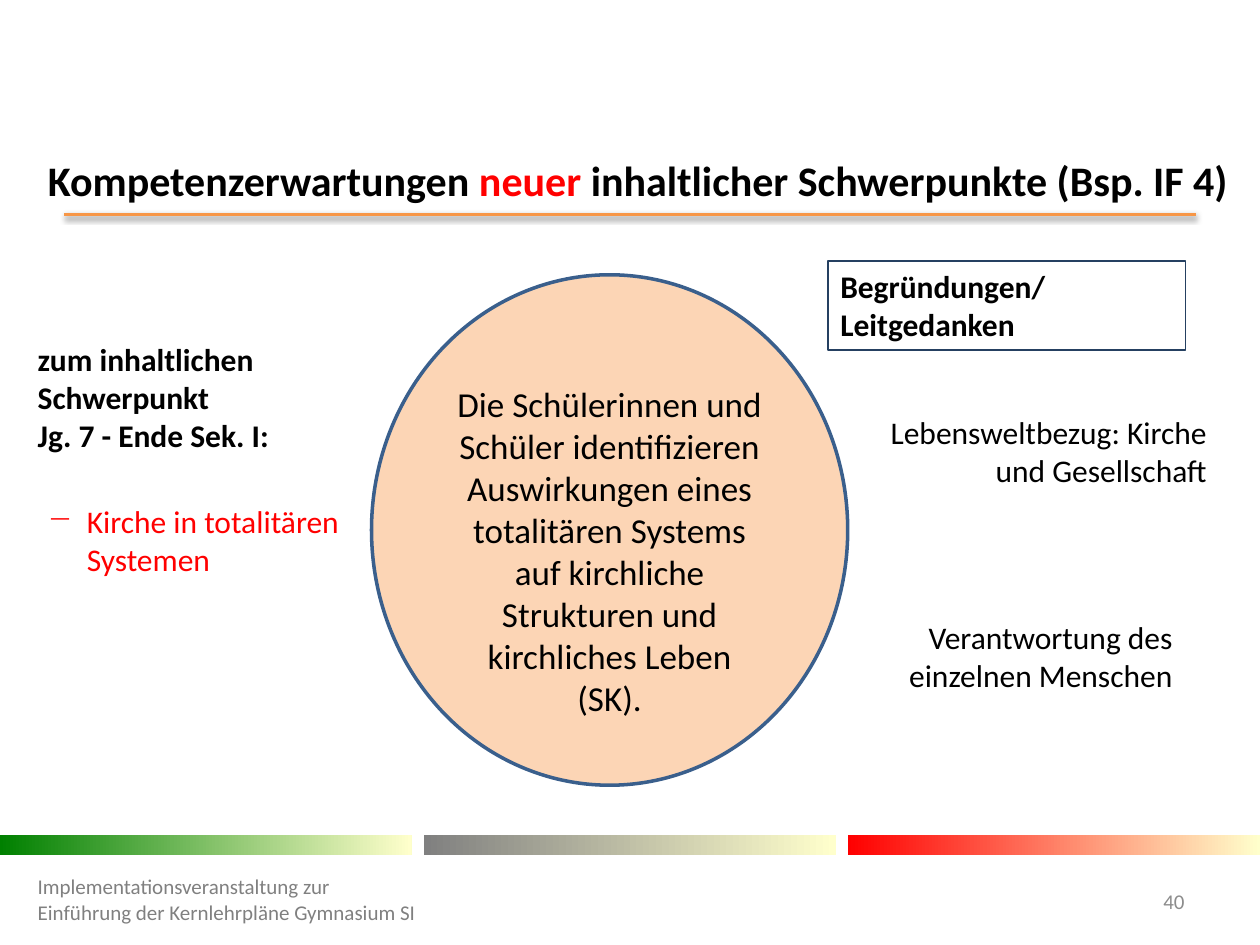
from dataclasses import dataclass

from lxml import etree
from pptx import Presentation
from pptx.dml.color import RGBColor
from pptx.enum.shapes import MSO_CONNECTOR, MSO_SHAPE
from pptx.enum.text import MSO_ANCHOR, MSO_AUTO_SIZE, PP_ALIGN
from pptx.oxml.ns import qn
from pptx.util import Cm, Pt

LEFT, CENTER, RIGHT = PP_ALIGN.LEFT, PP_ALIGN.CENTER, PP_ALIGN.RIGHT
TOP, MIDDLE = MSO_ANCHOR.TOP, MSO_ANCHOR.MIDDLE
RECTANGLE, OVAL = MSO_SHAPE.RECTANGLE, MSO_SHAPE.OVAL
STRAIGHT = MSO_CONNECTOR.STRAIGHT
TITLE_ONLY = 5


@dataclass(frozen=True)
class Theme:
    font: str = "Calibri"
    title_size: int = 24
    circle_size: int = 20
    body_size: int = 18
    footer_size: int = 12
    text: str = "000000"
    accent: str = "FF0000"
    footer: str = "808080"
    number: str = "8C8C8C"
    rule: str = "F79646"
    circle_fill: str = "FCD5B5"
    circle_line: str = "3A5F8C"
    frame_line: str = "254061"
    bar_starts: tuple = ("008000", "808080", "FF0000")
    bar_end: str = "FFFFCC"


THEME = Theme()


def rgb(value):
    return RGBColor.from_string(value)


def box(left, top, width, height):
    return Cm(left), Cm(top), Cm(width), Cm(height)


def write_text(shape, paragraphs, size=THEME.body_size, color=THEME.text, bold=False,
               align=LEFT, anchor=TOP, bullet=None, grow=False):
    """Fill a shape; a paragraph is a string or a list of (text, color) runs."""
    frame = shape.text_frame
    frame.word_wrap = True
    frame.vertical_anchor = anchor
    frame.auto_size = MSO_AUTO_SIZE.SHAPE_TO_FIT_TEXT if grow else MSO_AUTO_SIZE.NONE
    for index, content in enumerate(paragraphs):
        paragraph = frame.add_paragraph() if index else frame.paragraphs[0]
        paragraph.alignment = align
        if bullet:
            add_bullet(paragraph, bullet)
        runs = [(content, color)] if isinstance(content, str) else content
        for text, run_color in runs:
            run = paragraph.add_run()
            run.text = text
            run.font.name = THEME.font
            run.font.size = Pt(size)
            run.font.bold = bold
            run.font.color.rgb = rgb(run_color)


def add_bullet(paragraph, character, indent=Cm(0.79)):
    properties = paragraph._p.get_or_add_pPr()
    properties.set("marL", str(indent))
    properties.set("indent", str(-indent))
    etree.SubElement(properties, qn("a:buChar"), char=character)


def add_text(slide, position, paragraphs, **text_format):
    text_box = slide.shapes.add_textbox(*position)
    write_text(text_box, paragraphs, **text_format)


def add_outlined_shape(slide, kind, position, line, line_width, fill=None):
    shape = slide.shapes.add_shape(kind, *position)
    shape.shadow.inherit = False
    if fill:
        shape.fill.solid()
        shape.fill.fore_color.rgb = rgb(fill)
    else:
        shape.fill.background()
    shape.line.color.rgb = rgb(line)
    shape.line.width = Pt(line_width)
    return shape


def add_title(slide):
    title = slide.shapes.title
    title.left, title.top, title.width, title.height = box(0.71, 3.12, 24.41, 0.99)
    heading = [("Kompetenzerwartungen ", THEME.text), ("neuer", THEME.accent),
               (" inhaltlicher Schwerpunkte (Bsp. IF 4)", THEME.text)]
    write_text(title, [heading], size=THEME.title_size, bold=True, anchor=MIDDLE)


def add_title_rule(slide):
    """Draw the line under the title with its soft shadow."""
    rule = slide.shapes.add_connector(STRAIGHT, Cm(1.3), Cm(4.32), Cm(24.1), Cm(4.32))
    rule.line.color.rgb = rgb(THEME.rule)
    rule.line.width = Pt(2)
    effects = etree.SubElement(rule._element.spPr, qn("a:effectLst"))
    shadow = etree.SubElement(effects, qn("a:outerShdw"), blurRad=str(Pt(3.1)),
                              dist=str(Pt(1.6)), dir="5400000", rotWithShape="0")
    color = etree.SubElement(shadow, qn("a:srgbClr"), val="000000")
    etree.SubElement(color, qn("a:alpha"), val="38000")


def add_gradient_bars(slide, slide_width=25.4, bar_width=8.3):
    count = len(THEME.bar_starts)
    pitch = (slide_width - bar_width) / (count - 1)
    for index, start in enumerate(THEME.bar_starts):
        bar = slide.shapes.add_shape(RECTANGLE, *box(index * pitch, 16.84, bar_width, 0.4))
        bar.shadow.inherit = False
        bar.line.fill.background()
        bar.fill.gradient()
        bar.fill.gradient_angle = 0
        for stop, color, position in zip(bar.fill.gradient_stops, (start, THEME.bar_end), (0, 1)):
            stop.color.rgb = rgb(color)
            stop.position = position


def add_circle(slide):
    circle = add_outlined_shape(slide, OVAL, box(7.49, 5.54, 9.6, 10.29),
                                THEME.circle_line, 2, THEME.circle_fill)
    write_text(circle, ["Die Schülerinnen und Schüler identifizieren Auswirkungen eines "
                        "totalitären Systems auf kirchliche Strukturen und kirchliches Leben",
                        "(SK)."],
               size=THEME.circle_size, align=CENTER, anchor=MIDDLE)
    circle.text_frame.margin_top = Cm(0.97)


def add_focus(slide):
    add_text(slide, box(0.51, 6.73, 7, 3.33),
             ["zum inhaltlichen Schwerpunkt", "Jg. 7 - Ende Sek. I:"], bold=True, grow=True)
    add_text(slide, box(0.71, 10, 6.4, 1.8), ["Kirche in totalitären Systemen"],
             color=THEME.accent, bullet="−", grow=True)


def add_reasons(slide):
    frame = add_outlined_shape(slide, RECTANGLE, box(16.69, 5.26, 7.21, 1.8),
                               THEME.frame_line, 0.75)
    write_text(frame, ["Begründungen/", "Leitgedanken"], bold=True, grow=True)
    reasons = [(17.58, 8.2, "Lebensweltbezug: Kirche und Gesellschaft"),
               (16.89, 12.34, "Verantwortung des einzelnen Menschen")]
    for left, top, reason in reasons:
        add_text(slide, box(left, top, 7, 1.8), [reason], align=RIGHT, grow=True)


def add_footer(slide):
    add_text(slide, box(0.51, 17.53, 8.23, 1.19),
             ["Implementationsveranstaltung zur Einführung der Kernlehrpläne Gymnasium SI"],
             size=THEME.footer_size, color=THEME.footer, anchor=MIDDLE)
    add_text(slide, box(22.5, 17.65, 1.63, 1.02), ["40"], size=THEME.footer_size,
             color=THEME.number, align=RIGHT, anchor=MIDDLE)


def main():
    presentation = Presentation()
    presentation.slide_width, presentation.slide_height = Cm(25.4), Cm(19.05)
    slide = presentation.slides.add_slide(presentation.slide_layouts[TITLE_ONLY])
    add_title(slide)
    add_title_rule(slide)
    add_gradient_bars(slide)
    add_circle(slide)
    add_focus(slide)
    add_reasons(slide)
    add_footer(slide)
    presentation.save("out.pptx")


if __name__ == "__main__":
    main()
